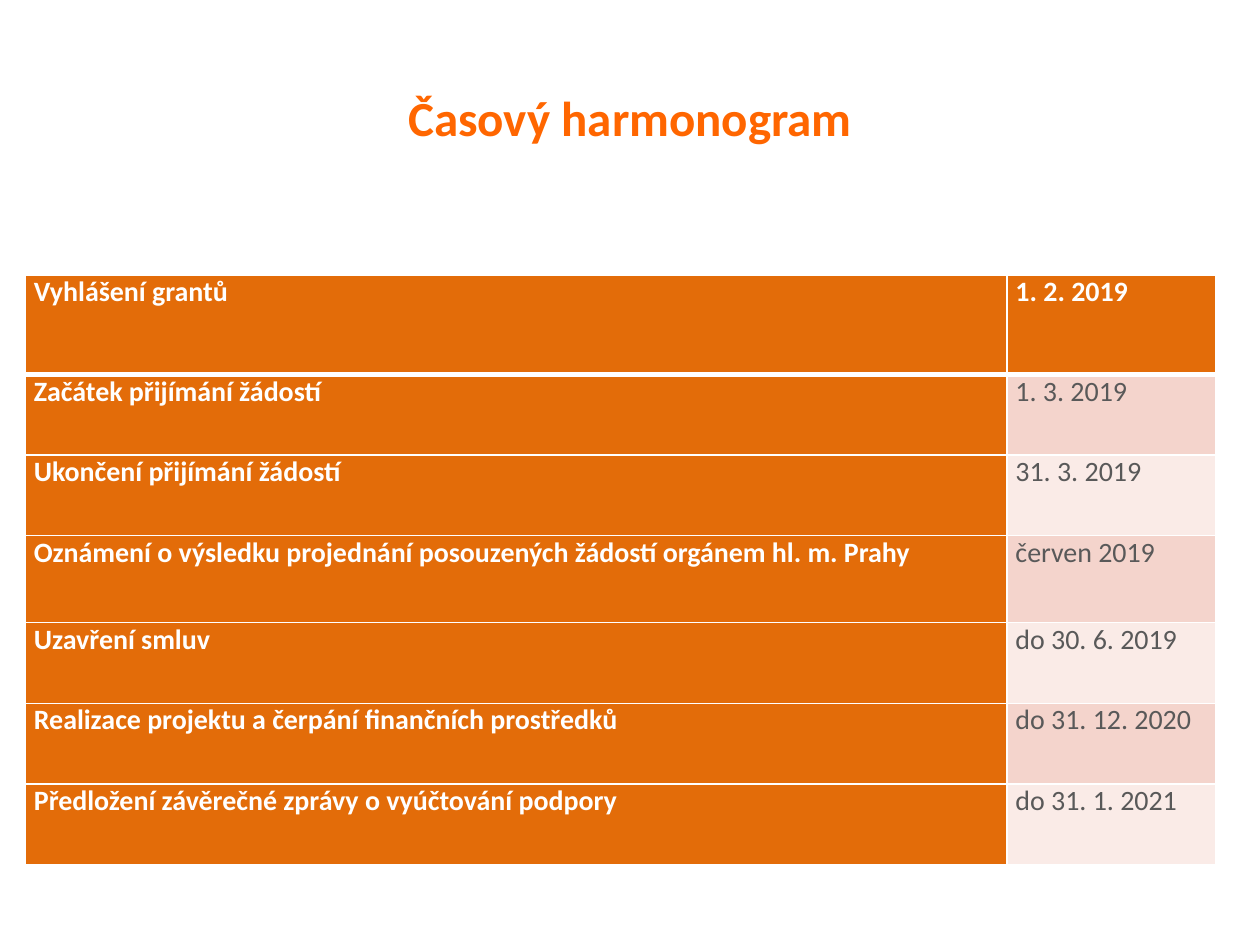
from lxml import etree
from pptx import Presentation, util as u
from pptx.dml.color import RGBColor
from pptx.enum import text
from pptx.oxml import ns

COLORS = {
    "title": "FF6600",
    "label": "E36C09",
    "odd": "F4D4CC",
    "even": "FAEBE7",
    "date": "595959",
    "white": "FFFFFF",
}

MILESTONES = [
    ("Vyhlášení grantů", "1. 2. 2019"),
    ("Začátek přijímání žádostí", "1. 3. 2019"),
    ("Ukončení přijímání žádostí", "31. 3. 2019"),
    ("Oznámení o výsledku projednání posouzených žádostí orgánem hl. m. Prahy", "červen 2019"),
    ("Uzavření smluv", "do 30. 6. 2019"),
    ("Realizace projektu a čerpání finančních prostředků", "do 31. 12. 2020"),
    ("Předložení závěrečné zprávy o vyúčtování podpory", "do 31. 1. 2021"),
]
COLUMN_WIDTHS = [560.9, 119.5]
ROW_HEIGHT = 46.1
SPECIAL_HEIGHTS = {0: 56.9, 3: 49.7}


class SlideBuilder:
    font_name = "Calibri"

    def __init__(self, slide):
        self.slide = slide

    def color(self, key):
        return RGBColor.from_string(COLORS[key])

    def label(self, frame, wording, size, color, bold, align):
        frame.text = wording
        paragraph = frame.paragraphs[0]
        paragraph.alignment = align
        font = paragraph.font
        font.name, font.size, font.bold = self.font_name, u.Pt(size), bold
        font.color.rgb = self.color(color)

    def title(self, wording, left, top, width, height):
        heading = self.slide.shapes.title
        heading.left, heading.top = u.Pt(left), u.Pt(top)
        heading.width, heading.height = u.Pt(width), u.Pt(height)
        heading.text_frame.vertical_anchor = text.MSO_ANCHOR.MIDDLE
        self.label(heading.text_frame, wording, 28, "title", True, text.PP_ALIGN.CENTER)

    def borders(self, cell, widths):
        properties = cell._tc.get_or_add_tcPr()
        for side, width in widths.items():
            line = etree.SubElement(properties, ns.qn(f"a:ln{side}"), w=str(u.Pt(width)))
            fill = etree.SubElement(line, ns.qn("a:solidFill"))
            etree.SubElement(fill, ns.qn("a:srgbClr"), val=COLORS["white"])

    def cell(self, cell, wording, fill, color, bold, widths):
        cell.margin_left = cell.margin_right = u.Pt(5)
        cell.margin_top = cell.margin_bottom = 0
        self.borders(cell, widths)
        cell.fill.solid()
        cell.fill.fore_color.rgb = self.color(fill)
        self.label(cell.text_frame, wording, 16, color, bold, text.PP_ALIGN.JUSTIFY)

    def schedule(self, milestones, left, top):
        heights = [SPECIAL_HEIGHTS.get(i, ROW_HEIGHT) for i in range(len(milestones))]
        table = self.slide.shapes.add_table(
            len(milestones), len(COLUMN_WIDTHS), u.Pt(left), u.Pt(top),
            u.Pt(sum(COLUMN_WIDTHS)), u.Pt(sum(heights)),
        ).table
        for column, width in zip(table.columns, COLUMN_WIDTHS):
            column.width = u.Pt(width)
        for i, (milestone, height) in enumerate(zip(milestones, heights)):
            table.rows[i].height = u.Pt(height)
            widths = {"L": 1, "R": 1, "T": 3 if i == 1 else 1, "B": 3 if i == 0 else 1}
            for j, wording in enumerate(milestone):
                strong = i == 0 or j == 0
                band = "odd" if i % 2 else "even"
                self.cell(
                    table.cell(i, j), wording, "label" if strong else band,
                    "white" if strong else "date", strong, widths,
                )


def main():
    deck = Presentation()
    deck.slide_width, deck.slide_height = u.Pt(720), u.Pt(540)
    builder = SlideBuilder(deck.slides.add_slide(deck.slide_layouts[5]))
    builder.title("Časový harmonogram", 36, 21.6, 648, 90)
    builder.schedule(MILESTONES, 14.4, 157)
    deck.save("out.pptx")


if __name__ == "__main__":
    main()
